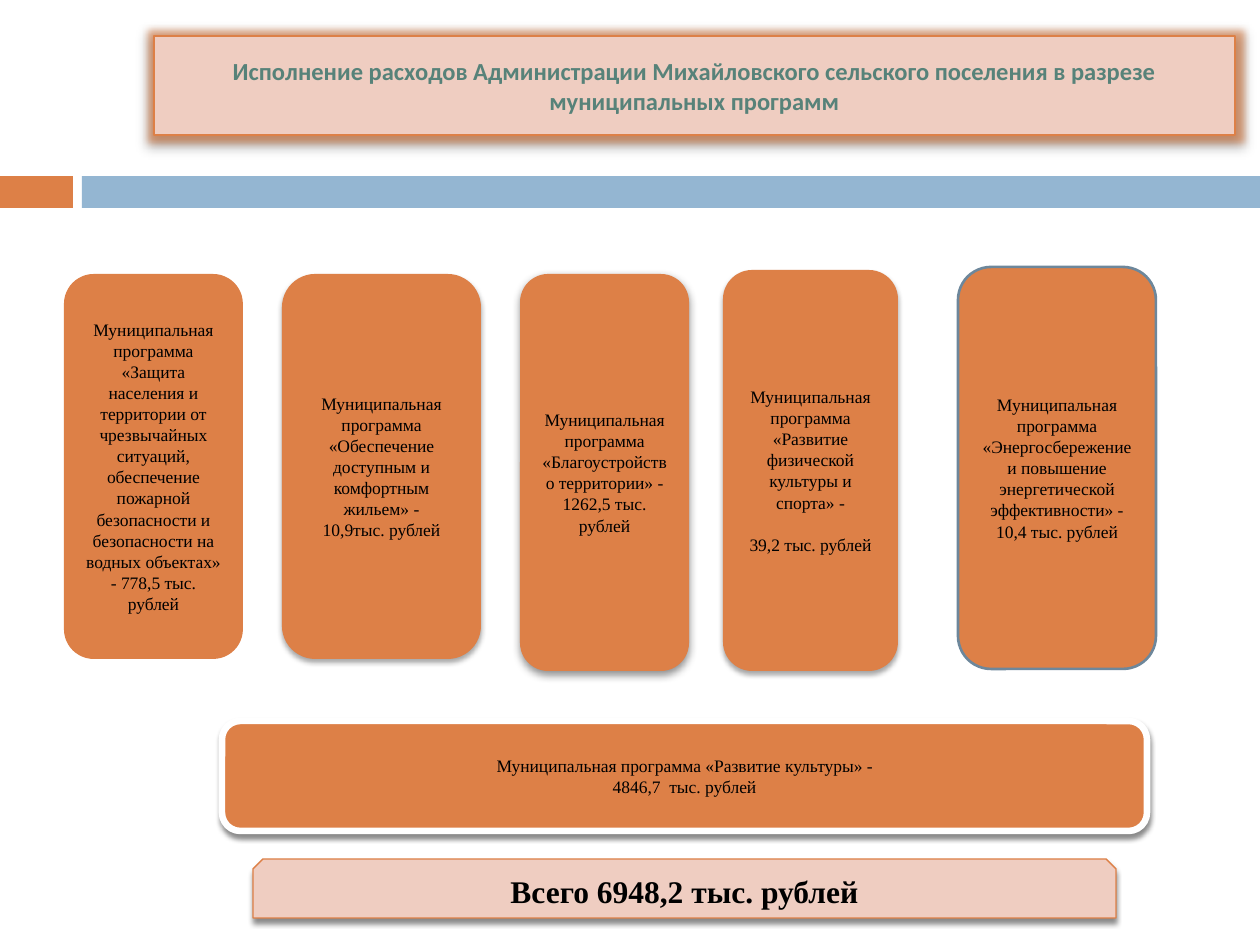
from dataclasses import dataclass
from typing import Optional

from lxml.etree import SubElement
from pptx import Presentation
from pptx.dml.color import RGBColor
from pptx.enum.shapes import MSO_SHAPE
from pptx.enum.text import MSO_ANCHOR, MSO_AUTO_SIZE, PP_ALIGN
from pptx.oxml.ns import qn
from pptx.util import Emu, Pt

EMU_PER_PX = 914400 / 126

ORANGE = RGBColor(0xDD, 0x80, 0x47)
BLUE = RGBColor(0x94, 0xB6, 0xD2)
PINK = RGBColor(0xEF, 0xCD, 0xC1)
TEAL = RGBColor(0x57, 0x82, 0x79)
SLATE = RGBColor(0x6D, 0x87, 0x9B)
WHITE = RGBColor(0xFF, 0xFF, 0xFF)
BLACK = RGBColor(0, 0, 0)


@dataclass(frozen=True)
class Shadow:
    opacity: int
    blur: float
    distance: float


@dataclass(frozen=True)
class TextStyle:
    font: str = "Times New Roman"
    size: int = 10
    color: RGBColor = BLACK
    bold: bool = False


@dataclass(frozen=True)
class Card:
    left: int
    top: int
    width: int
    height: int
    lines: tuple[str, ...] = ()
    geometry: MSO_SHAPE = MSO_SHAPE.FLOWCHART_ALTERNATE_PROCESS
    fill: RGBColor = ORANGE
    line: Optional[RGBColor] = None
    line_width: float = 0.79
    shadow: Optional[Shadow] = None
    style: TextStyle = TextStyle()
    gap: int = 0


SOFT = Shadow(35, 3, 2)
WIDE = Shadow(43, 5, 2)
DEEP = Shadow(45, 3, 2.4)

TITLE = Card(154, 36, 1081, 99,
             ("Исполнение расходов Администрации Михайловского сельского "
              "поселения в разрезе муниципальных программ",),
             MSO_SHAPE.ROUND_2_SAME_RECTANGLE, PINK, ORANGE, shadow=WIDE,
             style=TextStyle("Calibri", 14, TEAL, True))

BARS = (
    Card(0, 176, 73, 32, geometry=MSO_SHAPE.RECTANGLE),
    Card(82, 176, 1178, 32, geometry=MSO_SHAPE.RECTANGLE, fill=BLUE),
)

PROGRAMS = (
    Card(64, 274, 179, 385,
         ("Муниципальная программа «Защита населения и территории от "
          "чрезвычайных ситуаций, обеспечение пожарной безопасности и "
          "безопасности на водных объектах» - 778,5 тыс. рублей",)),
    Card(282, 274, 199, 385,
         ("Муниципальная программа «Обеспечение доступным и комфортным жильем» -",
          "10,9тыс. рублей"), shadow=SOFT),
    Card(520, 274, 169, 397,
         ("Муниципальная программа «Благоустройство территории» -",
          "1262,5 тыс. рублей"), shadow=WIDE),
    Card(723, 270, 175, 401,
         ("Муниципальная программа «Развитие физической культуры и спорта» -",
          "39,2 тыс. рублей"), shadow=SOFT, gap=12),
    Card(958, 267, 198, 402,
         ("Муниципальная программа «Энергосбережение и повышение "
          "энергетической эффективности» - 10,4 тыс. рублей",),
         MSO_SHAPE.ROUNDED_RECTANGLE, line=SLATE, line_width=1.5),
)

CULTURE = Card(222, 721, 925, 110,
               ("Муниципальная программа «Развитие культуры» -",
                "4846,7  тыс. рублей"),
               MSO_SHAPE.ROUNDED_RECTANGLE, line=WHITE, line_width=3.75, shadow=DEEP)

TOTAL = Card(253, 859, 863, 59, ("Всего 6948,2 тыс. рублей",),
             MSO_SHAPE.SNIP_2_SAME_RECTANGLE, PINK, ORANGE, shadow=DEEP,
             style=TextStyle(size=18, bold=True))


def px(length: int) -> Emu:
    return Emu(round(length * EMU_PER_PX))


def add_color(parent, color: RGBColor, opacity: int) -> None:
    element = SubElement(parent, qn("a:srgbClr"), val=str(color))
    SubElement(element, qn("a:alpha"), val=str(opacity * 1000))


def add_effects(shape, shadow: Optional[Shadow], glow: Optional[RGBColor] = None) -> None:
    shape.shadow.inherit = False
    effects = shape._element.spPr.find(qn("a:effectLst"))
    if glow is not None:
        add_color(SubElement(effects, qn("a:glow"), rad=str(Pt(8))), glow, 60)
    if shadow is not None:
        outer = SubElement(effects, qn("a:outerShdw"), blurRad=str(Pt(shadow.blur)),
                           dist=str(Pt(shadow.distance)), dir="5400000",
                           algn="ctr", rotWithShape="0")
        add_color(outer, BLACK, shadow.opacity)


def write_text(shape, card: Card) -> None:
    frame = shape.text_frame
    frame.word_wrap = True
    frame.auto_size = MSO_AUTO_SIZE.NONE
    frame.vertical_anchor = MSO_ANCHOR.MIDDLE
    for index, line in enumerate(card.lines):
        paragraph = frame.add_paragraph() if index else frame.paragraphs[0]
        paragraph.alignment = PP_ALIGN.CENTER
        paragraph.space_before = Pt(card.gap if index else 0)
        run = paragraph.add_run()
        run.text = line
        run.font.name = card.style.font
        run.font.size = Pt(card.style.size)
        run.font.bold = card.style.bold
        run.font.color.rgb = card.style.color


def format_shape(shape, card: Card, glow: Optional[RGBColor] = None) -> None:
    shape.fill.solid()
    shape.fill.fore_color.rgb = card.fill
    if card.line is None:
        shape.line.fill.background()
    else:
        shape.line.color.rgb = card.line
        shape.line.width = Pt(card.line_width)
    add_effects(shape, card.shadow, glow)
    write_text(shape, card)


def add_card(slide, card: Card) -> None:
    shape = slide.shapes.add_shape(card.geometry, px(card.left), px(card.top),
                                   px(card.width), px(card.height))
    format_shape(shape, card)


def place_title(slide, card: Card) -> None:
    title = slide.shapes.title
    title.left, title.top = px(card.left), px(card.top)
    title.width, title.height = px(card.width), px(card.height)
    geometry = SubElement(title._element.spPr, qn("a:prstGeom"), prst="round2SameRect")
    SubElement(geometry, qn("a:avLst"))
    format_shape(title, card, glow=ORANGE)


def main() -> None:
    presentation = Presentation()
    presentation.slide_width, presentation.slide_height = px(1260), px(945)
    slide = presentation.slides.add_slide(presentation.slide_layouts[5])

    # Heading and the divider bars beneath it
    place_title(slide, TITLE)
    for bar in BARS:
        add_card(slide, bar)

    # Programme columns, the culture programme and the total
    for card in (*PROGRAMS, TOTAL, CULTURE):
        add_card(slide, card)

    presentation.save("out.pptx")


if __name__ == "__main__":
    main()
